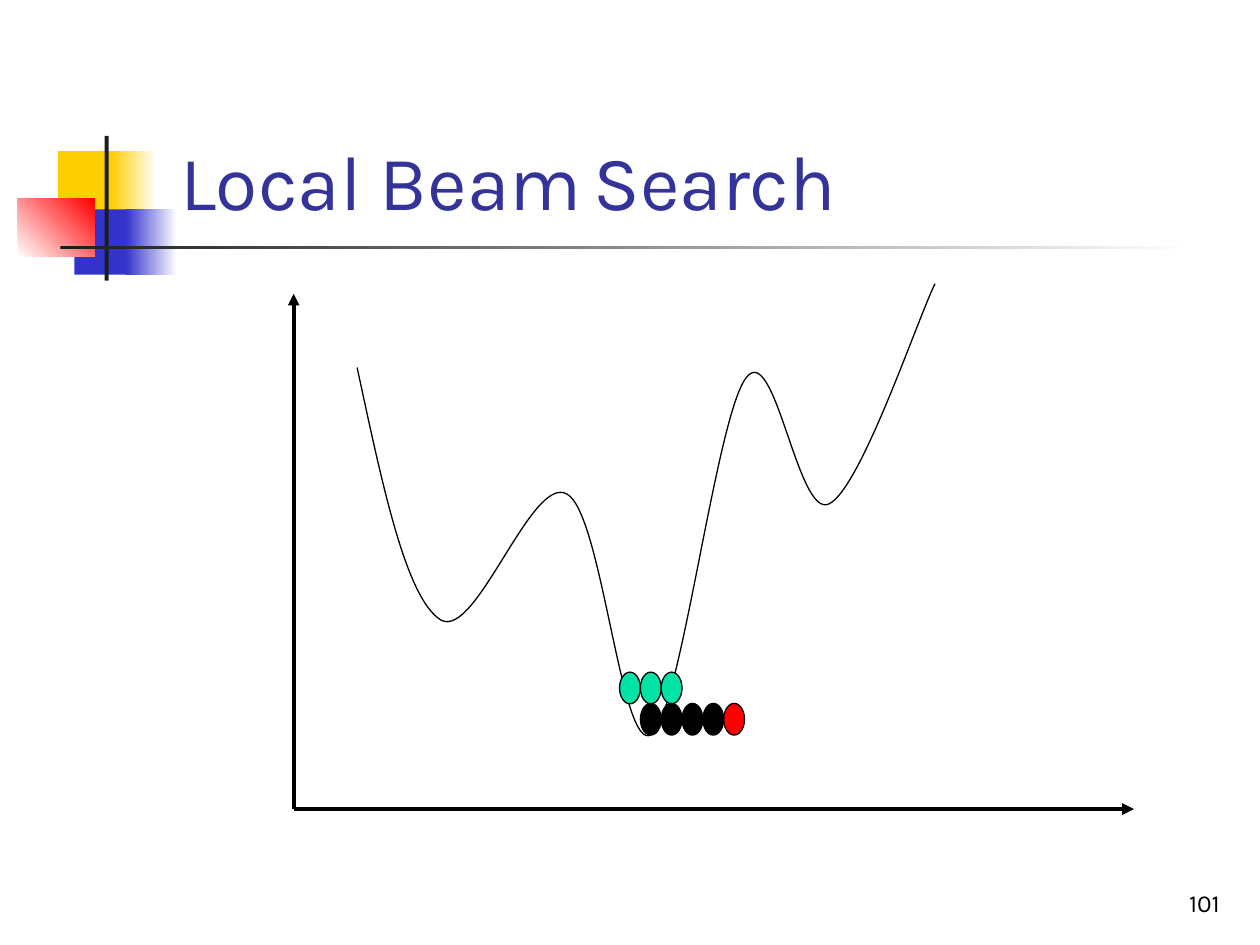
from pptx import Presentation
from pptx.dml.color import RGBColor
from pptx.enum.shapes import MSO_CONNECTOR as Link, MSO_SHAPE as Shape
from pptx.enum.text import MSO_ANCHOR as Anchor, PP_ALIGN as Align
from pptx.oxml.ns import qn
from pptx.util import Cm, Pt
from lxml.etree import SubElement

COLORS = {
    "yellow": "FFCF01", "blue": "3333CC", "red": "FF0000", "ink": "1C1C1C",
    "white": "FFFFFF", "black": "000000", "title": "333399", "green": "00E4A8",
}
FONT = "Karla"

# Content; all lengths in cm
TITLE = [("Local Beam", 44), (" ", 28), ("Search", 44)]
PAGE_NUMBER = [("101", 14)]

# Ornament: left, top, width, height, colours (two make a gradient), angle
ORNAMENT = [
    (1.17, 3.05, 1.22, 1.32, ["yellow"], 0),
    (2.24, 3.05, 0.91, 1.32, ["yellow", "white"], 0),
    (1.5, 4.22, 1.17, 1.32, ["blue"], 0),
    (2.54, 4.22, 1.02, 1.32, ["blue", "white"], 0),
    (0.36, 4.01, 1.55, 1.17, ["white", "red"], 45),
    (2.11, 2.74, 0.08, 2.92, ["ink"], 0),
    (1.22, 4.95, 22.86, 0.08, ["ink", "white"], 0),
]

ORIGIN = (5.92, 16.31)
AXIS_TIPS = [(5.92, 5.92), (22.86, 16.31)]

# Start point, then two control points and an end point per segment
CURVE = [
    (7.2, 7.41),
    (7.7, 9.73), (8.18, 12.07), (8.89, 12.5),
    (9.6, 12.9), (10.72, 9.55), (11.43, 9.96),
    (12.14, 10.34), (12.52, 15.21), (13.13, 14.81),
    (13.72, 14.43), (14.43, 8.41), (15.04, 7.62),
    (15.62, 6.83), (16.08, 10.46), (16.71, 10.16),
    (17.35, 9.86), (18.49, 6.45), (18.85, 5.72),
]

# Rows of beam states: left, top, colours
STATE_ROWS = [
    (12.49, 13.55, ["green"] * 3),
    (12.91, 14.18, ["black"] * 4 + ["red"]),
]
STATE_WIDTH, STATE_HEIGHT = 0.42, 0.64


def rgb(name):
    return RGBColor.from_string(COLORS[name])


def add_filled(page, kind, box, colors, angle=0):
    shape = page.shapes.add_shape(kind, *map(Cm, box))
    shape.shadow.inherit = False
    if len(colors) == 1:
        shape.fill.solid()
        shape.fill.fore_color.rgb = rgb(colors[0])
    else:
        shape.fill.gradient()
        shape.fill.gradient_angle = angle
        for stop, color in zip(shape.fill.gradient_stops, colors):
            stop.color.rgb = rgb(color)
    shape.line.fill.background()
    return shape


def set_line(shape, width):
    shape.line.color.rgb = rgb("black")
    shape.line.width = Pt(width)


def add_text(page, box, spans, color, align):
    frame = page.shapes.add_textbox(*map(Cm, box)).text_frame
    frame.word_wrap = True
    frame.vertical_anchor = Anchor.BOTTOM
    para = frame.paragraphs[0]
    para.alignment = align
    para.font.name = FONT
    para.font.color.rgb = rgb(color)
    for text, size in spans:
        span = para.add_run()
        span.text = text
        span.font.size = Pt(size)
        span.font.name = FONT
        span.font.color.rgb = rgb(color)


def add_axis(page, tip):
    axis = page.shapes.add_connector(Link.STRAIGHT, *map(Cm, ORIGIN + tip))
    set_line(axis, 2.25)
    SubElement(axis.line._get_or_add_ln(), qn("a:tailEnd"), type="triangle")
    SubElement(axis._element.spPr, qn("a:effectLst"))


def add_curve(page, points):
    start, *others = [(Cm(x), Cm(y)) for x, y in points]
    builder = page.shapes.build_freeform(*start)
    builder.add_line_segments(others, close=False)
    curve = builder.convert_to_shape()
    curve.shadow.inherit = False
    curve.fill.background()
    set_line(curve, 0.75)
    # Merge every three straight steps into one Bézier segment
    steps = list(curve._element.iter(qn("a:lnTo")))
    outline = steps[0].getparent()
    for first in range(0, len(steps), 3):
        bend = SubElement(outline, qn("a:cubicBezTo"))
        for step in steps[first:first + 3]:
            bend.append(step[0])
            outline.remove(step)


def main():
    deck = Presentation()
    deck.slide_width, deck.slide_height = Cm(25.4), Cm(19.05)
    page = deck.slides.add_slide(deck.slide_layouts[6])

    # Ornament and text
    for *box, colors, angle in ORNAMENT:
        add_filled(page, Shape.RECTANGLE, box, colors, angle)
    add_text(page, (19.56, 17.35, 5.28, 1.27), PAGE_NUMBER, "black", Align.RIGHT)
    add_text(page, (3.38, 2.39, 21.64, 2.29), TITLE, "title", Align.LEFT)

    # Search landscape
    for tip in AXIS_TIPS:
        add_axis(page, tip)
    add_curve(page, CURVE)

    # Beam states
    for left, top, colors in STATE_ROWS:
        for column, color in enumerate(colors):
            box = (left + column * STATE_WIDTH, top, STATE_WIDTH, STATE_HEIGHT)
            set_line(add_filled(page, Shape.OVAL, box, [color]), 0.75)

    deck.save("out.pptx")


if __name__ == "__main__":
    main()
